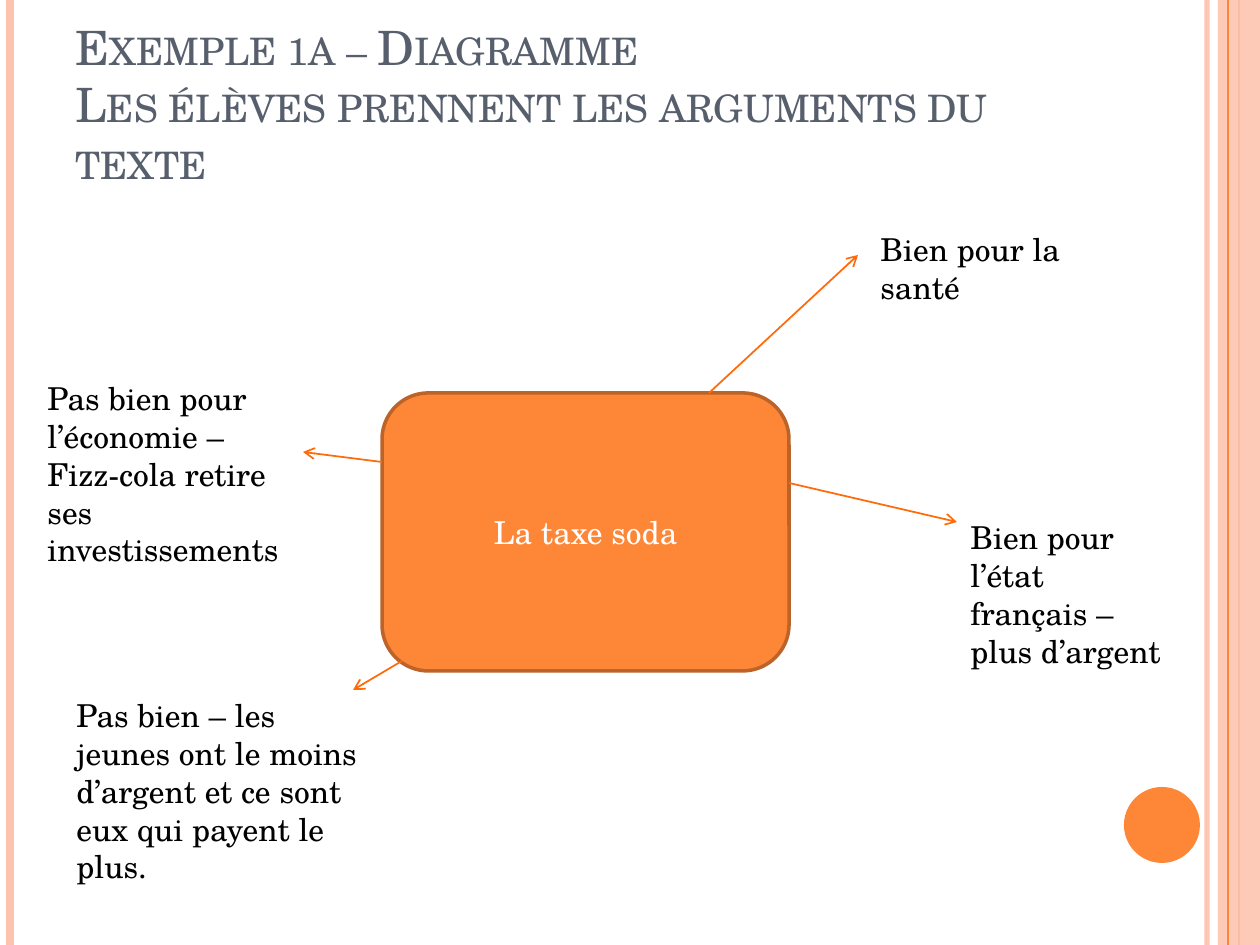
from pptx import Presentation
from pptx.dml.color import RGBColor
from pptx.enum.shapes import MSO_CONNECTOR, MSO_SHAPE
from pptx.enum.text import MSO_ANCHOR, PP_ALIGN
from pptx.oxml.ns import qn
from pptx.util import Pt
from lxml.etree import SubElement

EMU_PER_PX = 914400 / 126
SLIDE_W, SLIDE_H = 1260, 945
FONT = "TeX Gyre Schola"

ORANGE = RGBColor(0xFE, 0x86, 0x37)
DARK_ORANGE = RGBColor(0xBC, 0x63, 0x29)
ARROW_ORANGE = RGBColor(0xFF, 0x6B, 0x0A)
PEACH = RGBColor(0xFE, 0xC3, 0xAE)
SLATE = RGBColor(0x57, 0x5F, 0x6D)
WHITE = RGBColor(0xFF, 0xFF, 0xFF)
BLACK = RGBColor(0, 0, 0)

TITLE = "Exemple 1a – Diagramme\vLes élèves prennent les arguments du texte"

# text, box, arrow from the topic to the argument
ARGUMENTS = [
    ("Bien pour la santé", (868, 224, 218, 89), (709, 393, 858, 255)),
    ("Bien pour l’état français – plus d’argent",
     (958, 512, 218, 165), (789, 483, 957, 522)),
    ("Pas bien pour l’économie – Fizz-cola retire ses investissements",
     (35, 373, 258, 204), (382, 462, 303, 452)),
    ("Pas bien – les jeunes ont le moins d’argent et ce sont eux qui payent le plus.",
     (64, 690, 307, 204), (402, 661, 353, 690)),
]


def px(n):
    return round(n * EMU_PER_PX)


def set_alpha(fill_parent, percent):
    color = fill_parent.find(".//" + qn("a:srgbClr"))
    SubElement(color, qn("a:alpha")).set("val", str(percent * 1000))


def write_text(sp, text, size=18, color=BLACK, align=PP_ALIGN.LEFT,
               anchor=MSO_ANCHOR.TOP, small_caps=False):
    tf = sp.text_frame
    tf.word_wrap = True
    tf.vertical_anchor = anchor
    p = tf.paragraphs[0]
    p.text = text
    p.alignment = align
    for r in p.runs:
        r.font.name = FONT
        r.font.size = Pt(size)
        r.font.color.rgb = color
        if small_caps:
            r.font._element.set("cap", "small")


def add_text(s, text, box, **text_format):
    sp = s.shapes.add_textbox(*map(px, box))
    write_text(sp, text, **text_format)


def add_filled(s, kind, box, fill, line=None, width=2, alpha=None):
    sp = s.shapes.add_shape(kind, *map(px, box))
    sp.shadow.inherit = False
    sp.fill.solid()
    sp.fill.fore_color.rgb = fill
    if alpha:
        set_alpha(sp._element.spPr, alpha)
    if line is None:
        sp.line.fill.background()
    else:
        sp.line.color.rgb = line
        sp.line.width = Pt(width)
    return sp


def add_line(s, ends, color, width, alpha=None, arrow=False):
    line = s.shapes.add_connector(MSO_CONNECTOR.STRAIGHT, *map(px, ends))
    line.line.color.rgb = color
    line.line.width = Pt(width)
    sp_pr = line._element.spPr
    if alpha:
        set_alpha(sp_pr, alpha)
    if arrow:
        SubElement(sp_pr.find(qn("a:ln")), qn("a:tailEnd")).set("type", "arrow")
    SubElement(sp_pr, qn("a:effectLst"))


def add_vertical_rule(s, x, color, width, alpha=None):
    add_line(s, (x, 0, x, SLIDE_H), color, width, alpha)


def add_decoration(s):
    add_vertical_rule(s, 1207, PEACH, 3, alpha=93)
    add_vertical_rule(s, 10, PEACH, 4.5)
    add_vertical_rule(s, 1239, ORANGE, 1.5)
    add_filled(s, MSO_SHAPE.RECTANGLE, (1218, 0, 42, SLIDE_H), PEACH, alpha=87)
    add_vertical_rule(s, 1228, ORANGE, 0.75)
    add_filled(s, MSO_SHAPE.OVAL, (1124, 787, 76, 76), ORANGE)


def main():
    prs = Presentation()
    prs.slide_width, prs.slide_height = px(SLIDE_W), px(SLIDE_H)
    s = prs.slides.add_slide(prs.slide_layouts[6])

    add_decoration(s)
    add_text(s, TITLE, (63, 38, 1029, 157), size=27, color=SLATE,
             anchor=MSO_ANCHOR.BOTTOM, small_caps=True)
    topic = add_filled(s, MSO_SHAPE.ROUNDED_RECTANGLE, (382, 393, 407, 278),
                       ORANGE, line=DARK_ORANGE)
    write_text(topic, "La taxe soda", color=WHITE, align=PP_ALIGN.CENTER,
               anchor=MSO_ANCHOR.MIDDLE)
    for text, box, ends in ARGUMENTS:
        add_line(s, ends, ARROW_ORANGE, 1, arrow=True)
        add_text(s, text, box)

    prs.save("out.pptx")


if __name__ == "__main__":
    main()
